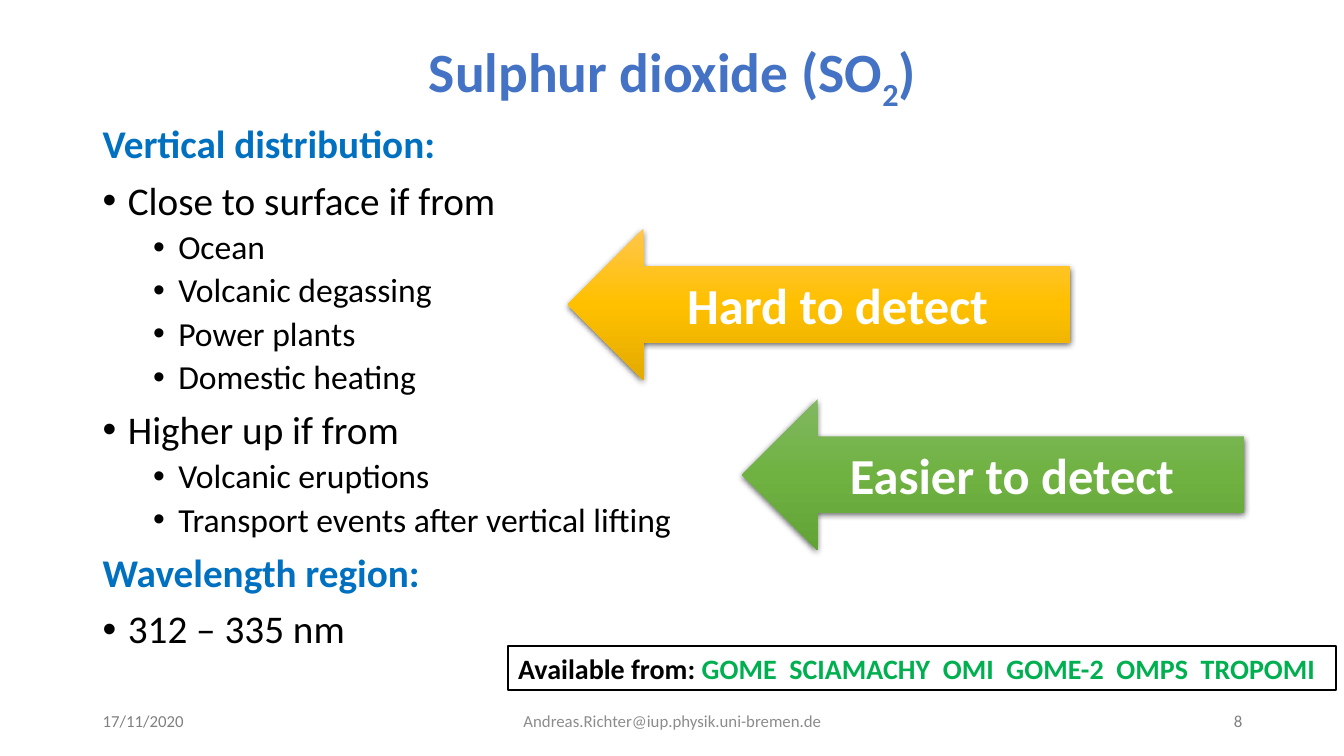
from lxml import etree
from pptx import Presentation
from pptx.dml.color import RGBColor
from pptx.enum.shapes import MSO_SHAPE
from pptx.enum.text import MSO_ANCHOR, MSO_AUTO_SIZE, PP_ALIGN
from pptx.oxml.ns import qn
from pptx.util import Inches, Pt

LEFT, CENTER, RIGHT = PP_ALIGN.LEFT, PP_ALIGN.CENTER, PP_ALIGN.RIGHT
TOP, MIDDLE = MSO_ANCHOR.TOP, MSO_ANCHOR.MIDDLE
LEFT_ARROW, RECTANGLE = MSO_SHAPE.LEFT_ARROW, MSO_SHAPE.RECTANGLE
GROW = MSO_AUTO_SIZE.SHAPE_TO_FIT_TEXT

BLACK = RGBColor(0x00, 0x00, 0x00)
WHITE = RGBColor(0xFF, 0xFF, 0xFF)
TITLE_BLUE = RGBColor(0x44, 0x72, 0xC4)
HEADING_BLUE = RGBColor(0x00, 0x70, 0xC0)
SENSOR_GREEN = RGBColor(0x00, 0xB0, 0x50)
GRAY = RGBColor(0x80, 0x80, 0x80)
FOOTER_GRAY = RGBColor(0x8C, 0x8C, 0x8C)
YELLOWS = (RGBColor(0xFF, 0xC6, 0x4B), RGBColor(0xFF, 0xC0, 0x00), RGBColor(0xE3, 0xAB, 0x00))
GREENS = (RGBColor(0x81, 0xB8, 0x61), RGBColor(0x6F, 0xB2, 0x42), RGBColor(0x62, 0xA3, 0x36))

HEADING, POINT, DETAIL = range(3)
OUTLINE = (
    (HEADING, "Vertical distribution:"),
    (POINT, "Close to surface if from"),
    (DETAIL, "Ocean"),
    (DETAIL, "Volcanic degassing"),
    (DETAIL, "Power plants"),
    (DETAIL, "Domestic heating"),
    (POINT, "Higher up if from"),
    (DETAIL, "Volcanic eruptions"),
    (DETAIL, "Transport events after vertical lifting"),
    (HEADING, "Wavelength region:"),
    (POINT, "312 – 335 nm"),
)
SENSORS = ("GOME", "SCIAMACHY", "OMI", "GOME-2", "OMPS", "TROPOMI")


class Page:
    """Draws styled elements on one slide."""

    font = "Calibri"

    def __init__(self, deck):
        self.shapes = deck.slides.add_slide(deck.slide_layouts[6]).shapes

    def style(self, para, size, color=None, bold=False, align=LEFT):
        para.alignment = align
        para.font.name = self.font
        para.font.size = Pt(size)
        para.font.bold = bold
        if color is not None:
            para.font.color.rgb = color

    def frame(self, left, top, width, height, anchor=MIDDLE):
        box = self.shapes.add_textbox(Inches(left), Inches(top), Inches(width), Inches(height))
        box.text_frame.word_wrap = True
        box.text_frame.vertical_anchor = anchor
        return box.text_frame

    def label(self, place, text, size, color, bold=False, align=LEFT):
        para = self.frame(*place).paragraphs[0]
        para.add_run().text = text
        self.style(para, size, color, bold, align)
        return para

    def title(self, place, before, subscript, after):
        para = self.label(place, before, 39.6, TITLE_BLUE, True, CENTER)
        para.line_spacing = 0.9
        span = para.add_run()
        span.text = subscript
        span.font._element.set("baseline", "-25000")
        para.add_run().text = after

    def outline(self, place, items):
        frame = self.frame(*place, anchor=TOP)
        for index, (kind, text) in enumerate(items):
            para = frame.add_paragraph() if index else frame.paragraphs[0]
            para.add_run().text = text
            para.line_spacing = 0.9
            para.space_before = Pt(5 if kind == DETAIL else 10)
            if kind != HEADING:
                self.bullet(para, kind - POINT)
            color = HEADING_BLUE if kind == HEADING else BLACK
            self.style(para, 24 if kind == DETAIL else 28, color, kind == HEADING)

    def bullet(self, para, level):
        para.level = level
        properties = para._p.get_or_add_pPr()
        properties.set("marL", str(Inches(0.25 + 0.5 * level)))
        properties.set("indent", str(Inches(-0.25)))
        etree.SubElement(properties, qn("a:buFont"), typeface="Arial")
        etree.SubElement(properties, qn("a:buChar"), char="•")

    def shape(self, kind, left, top, width, height):
        shape = self.shapes.add_shape(kind, Inches(left), Inches(top), Inches(width), Inches(height))
        shape.shadow.inherit = False
        return shape

    def arrow(self, left, top, text, colors):
        shape = self.shape(LEFT_ARROW, left, top, 4.98, 1.5)
        shape.line.fill.background()
        self.gradient(shape, colors)
        self.cast_shadow(shape)
        shape.text_frame.vertical_anchor = MIDDLE
        para = shape.text_frame.paragraphs[0]
        para.add_run().text = text
        self.style(para, 36, WHITE, True, CENTER)

    def gradient(self, shape, colors):
        shape.fill.gradient()
        shape.fill.gradient_angle = 270
        stops = shape._element.spPr.find(".//" + qn("a:gsLst"))
        for stop in list(stops):
            stops.remove(stop)
        for index, color in enumerate(colors):
            stop = etree.SubElement(stops, qn("a:gs"), pos=str(index * 50000))
            etree.SubElement(stop, qn("a:srgbClr"), val=str(color))

    def cast_shadow(self, shape):
        effects = shape._element.spPr.find(qn("a:effectLst"))
        shadow = etree.SubElement(effects, qn("a:outerShdw"), blurRad=str(Pt(4.5)),
                                  dist=str(Pt(1.5)), dir="5400000", algn="ctr", rotWithShape="0")
        color = etree.SubElement(shadow, qn("a:srgbClr"), val=str(BLACK))
        etree.SubElement(color, qn("a:alpha"), val="63000")

    def availability(self, place, lead, sensors):
        shape = self.shape(RECTANGLE, *place)
        shape.fill.background()
        shape.line.color.rgb = BLACK
        shape.line.width = Pt(1.5)
        frame = shape.text_frame
        frame.word_wrap = True
        frame.auto_size = GROW
        frame.vertical_anchor = TOP
        para = frame.paragraphs[0]
        self.style(para, 20, bold=True)
        for text, color in ((lead, BLACK), ("  ".join(sensors), SENSOR_GREEN)):
            span = para.add_run()
            span.text = text
            span.font.color.rgb = color


def main():
    deck = Presentation()
    deck.slide_width, deck.slide_height = Inches(13.33), Inches(7.5)
    page = Page(deck)
    page.label((0.92, 6.95, 3.32, 0.4), "17/11/2020", 12, GRAY)
    page.label((9.1, 6.95, 3.32, 0.4), "8", 12, GRAY, align=RIGHT)
    page.title((0.92, 0.4, 11.5, 0.63), "Sulphur dioxide (SO", "2", ")")
    page.outline((0.92, 1.19, 11.5, 5.57), OUTLINE)
    page.label((4.42, 6.95, 4.5, 0.4), "Andreas.Richter@iup.physik.uni-bremen.de",
               12, FOOTER_GRAY, align=CENTER)
    page.arrow(5.63, 2.27, "Hard to detect", YELLOWS)
    page.arrow(7.36, 3.96, "Easier to detect", GREENS)
    page.availability((5.04, 6.41, 8.21, 0.44), "Available from: ", SENSORS)
    deck.save("out.pptx")


if __name__ == "__main__":
    main()
